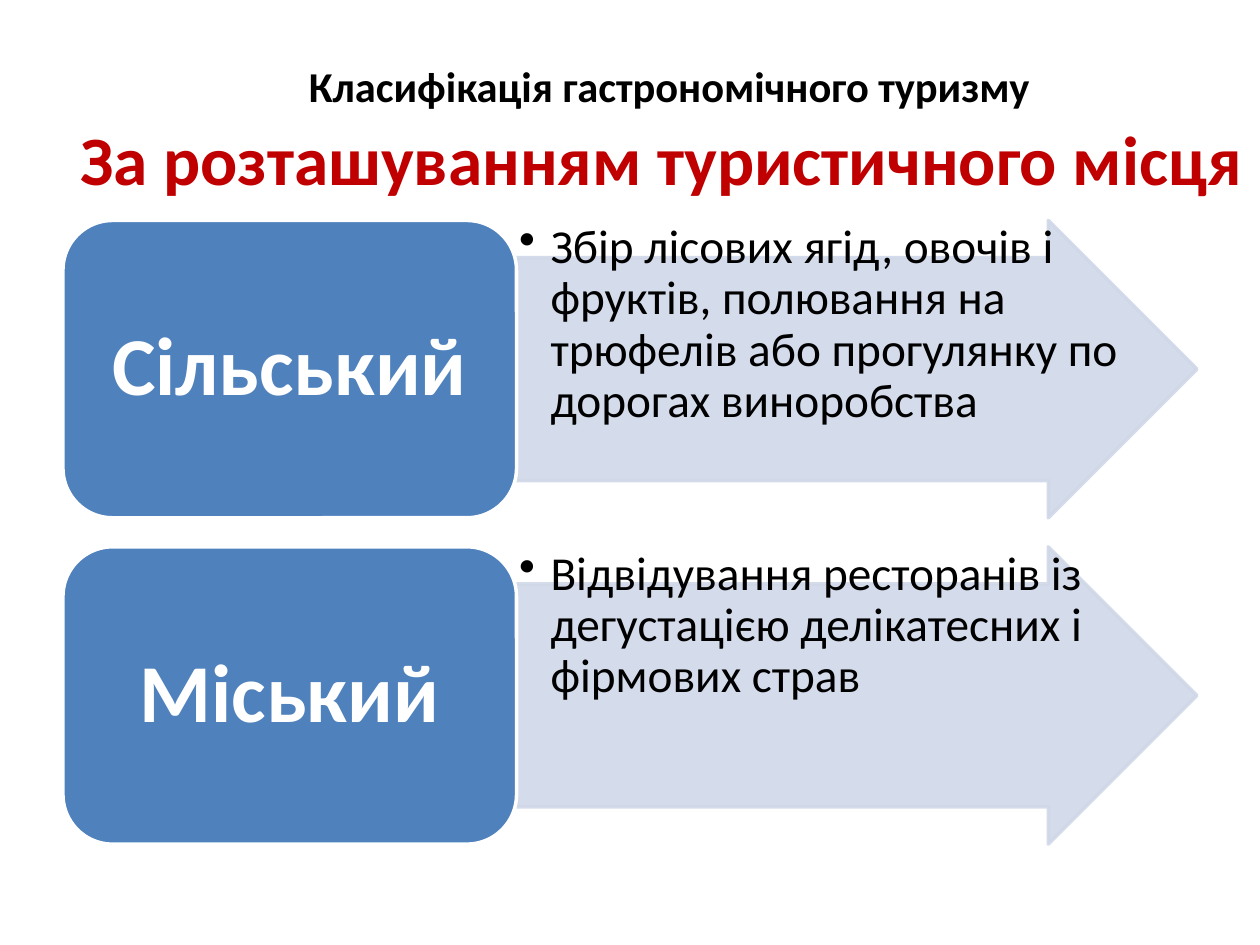
from typing import NamedTuple

from lxml.etree import SubElement
from pptx import Presentation
from pptx.dml.color import RGBColor
from pptx.enum.shapes import MSO_SHAPE
from pptx.enum.text import MSO_ANCHOR, PP_ALIGN
from pptx.oxml.ns import qn
from pptx.util import Inches, Pt

TOP, STEP, HIGH = 1.75, 2.59, 2.36
LEFT, WIDE = 0.5, 3.6
SIDE, LONG = LEFT + WIDE, 5.4


class Kind(NamedTuple):
    """One kind of place and what is done there."""
    name: str
    deed: str


KINDS = [
    Kind("Сільський", "Збір лісових ягід, овочів і фруктів, полювання на трюфелів "
                      "або прогулянку по дорогах виноробства"),
    Kind("Міський", "Відвідування ресторанів із дегустацією делікатесних і фірмових страв"),
]


def hue(code: str) -> RGBColor:
    """Turn a hex string into a colour."""
    return RGBColor.from_string(code)


def write(para, text: str, *, size: float, color: str = "000000", bold: bool = False) -> None:
    """Add a formatted run to a paragraph."""
    run = para.add_run()
    run.text = text
    run.font.name = "Calibri"
    run.font.size = Pt(size)
    run.font.bold = bold
    run.font.color.rgb = hue(color)


def frame(shape, *, anchor=MSO_ANCHOR.MIDDLE, align=PP_ALIGN.CENTER, pad=(0.1, 0.05)):
    """Set up the text frame of a shape and return its first paragraph."""
    body = shape.text_frame
    body.word_wrap = True
    body.vertical_anchor = anchor
    body.margin_left = body.margin_right = Inches(pad[0])
    body.margin_top = body.margin_bottom = Inches(pad[1])
    para = body.paragraphs[0]
    para.alignment = align
    return para


def block(slide, form, left: float, top: float, width: float, fill: str, line: str):
    """Draw a filled preset shape of row height."""
    shape = slide.shapes.add_shape(form, Inches(left), Inches(top), Inches(width), Inches(HIGH))
    shape.shadow.inherit = False
    shape.fill.solid()
    shape.fill.fore_color.rgb = hue(fill)
    shape.line.color.rgb = hue(line)
    shape.line.width = Pt(2)
    return shape


def fade(shape, share: int) -> None:
    """Make the fill and line of a shape partly clear."""
    for tint in shape._element.spPr.iter(qn("a:srgbClr")):
        SubElement(tint, qn("a:alpha"), val=str(share * 1000))


def bullet(para, indent: float) -> None:
    """Give a paragraph a hanging bullet."""
    props = para._p.get_or_add_pPr()
    props.set("marL", str(Inches(indent)))
    props.set("indent", str(-Inches(indent)))
    SubElement(props, qn("a:buChar"), char="•")


def title(slide) -> None:
    """Write the two-line heading."""
    box = slide.shapes.add_textbox(Inches(0.5), Inches(0.3), Inches(9.5), Inches(1.25))
    para = frame(box)
    write(para, " ", size=39.6)
    write(para, "Класифікація гастрономічного туризму", size=24.3, bold=True)
    para.add_line_break()
    write(para, "За розташуванням туристичного місця", size=39.6, color="C00000", bold=True)


def row(slide, kind: Kind, top: float) -> None:
    """Draw an arrow with its bullet and the named block beside it."""
    arrow = block(slide, MSO_SHAPE.RIGHT_ARROW, SIDE, top, LONG, "D0D8E8", "D0D8E8")
    arrow.adjustments[0] = 0.75
    arrow.adjustments[1] = 0.5
    fade(arrow, 90)

    box = slide.shapes.add_textbox(Inches(SIDE), Inches(top), Inches(LONG), Inches(HIGH))
    para = frame(box, anchor=MSO_ANCHOR.TOP, align=PP_ALIGN.LEFT, pad=(0.02, 0.02))
    para.line_spacing = 0.9
    bullet(para, 0.25)
    write(para, kind.deed, size=27)

    label = block(slide, MSO_SHAPE.ROUNDED_RECTANGLE, LEFT, top, WIDE, "4F81BD", "FFFFFF")
    para = frame(label)
    para.line_spacing = 0.9
    write(para, kind.name, size=47, color="FFFFFF", bold=True)


def main() -> None:
    """Build and save the slide."""
    deck = Presentation()
    deck.slide_width, deck.slide_height = Inches(10), Inches(7.5)
    slide = deck.slides.add_slide(deck.slide_layouts[6])
    title(slide)
    for i, kind in enumerate(KINDS):
        row(slide, kind, TOP + i * STEP)
    deck.save("out.pptx")


if __name__ == "__main__":
    main()
